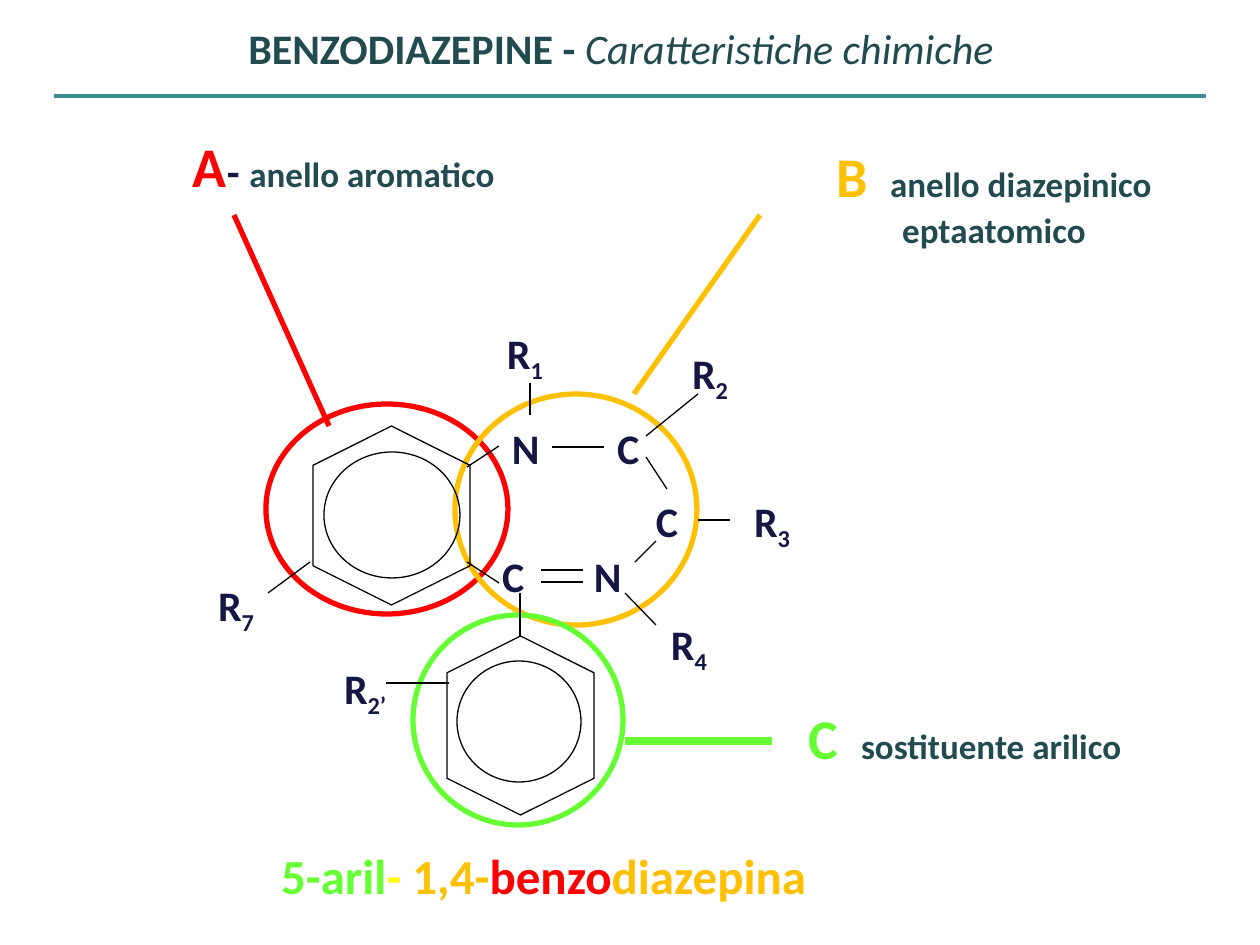
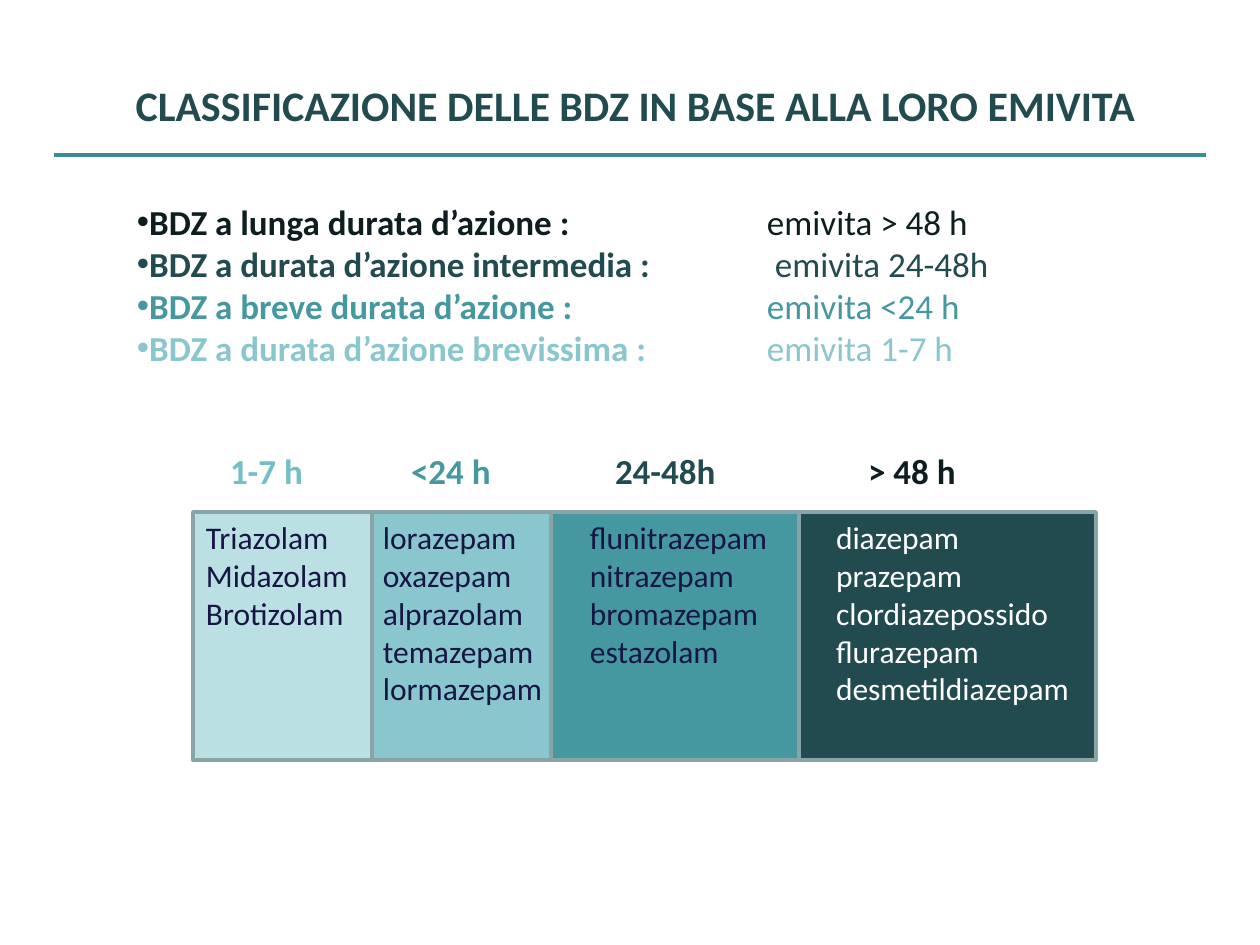
import pptx
import pptx.util
import pptx.dml.color
import pptx.enum.shapes
import pptx.enum.text
import pptx.oxml.ns
import lxml.etree

SCALE = 914400 / 126  # EMU in one px
FONT = "Calibri"
DARK, RULE, NAVY, BLACK = "224B50", "3C8C93", "161645", "000000"
RED, GOLD, GREEN, YELLOW = "FF0000", "FFC000", "66FF33", "FFFF00"
INK, TEAL, AQUA, SKY, PALE = "0E1E20", "4597A0", "8AC6CD", "72BFC5", "BBE0E3"
FRAME, WHITE = "89A4A7", "FFFFFF"
SHAPE = pptx.enum.shapes.MSO_SHAPE
ALIGN = pptx.enum.text.PP_ALIGN
MIDDLE = pptx.enum.text.MSO_ANCHOR.MIDDLE
TOP = pptx.enum.text.MSO_ANCHOR.TOP


def px(num):
    return pptx.util.Emu(round(num * SCALE))


def rgb(code):
    return pptx.dml.color.RGBColor.from_string(code)


def add_sub(node, tag, **attrs):
    return lxml.etree.SubElement(node, pptx.oxml.ns.qn(tag), attrs)


def add_tabs(para, stops):
    tabs = add_sub(para._p.get_or_add_pPr(), "a:tabLst")
    for stop in stops:
        add_sub(tabs, "a:tab", pos=str(px(stop)), algn="l")


def add_dot(para):
    props = para._p.get_or_add_pPr()
    props.set("marL", "0")
    props.set("indent", "0")
    add_sub(props, "a:buFont", typeface="Arial")
    add_sub(props, "a:buChar", char="•")


def write(frame, lines, size, align=ALIGN.LEFT, stops=(), dots=False):
    """Each line is a list of runs: text, colour, then optional settings."""
    for i, line in enumerate(lines):
        para = frame.paragraphs[0] if i == 0 else frame.add_paragraph()
        para.alignment = align
        if dots:
            add_dot(para)
        if stops:
            add_tabs(para, stops)
        for words, color, *rest in line:
            opts = rest[0] if rest else {}
            run = para.add_run()
            run.text = words
            run.font.name = FONT
            run.font.size = pptx.util.Pt(opts.get("size", size))
            run.font.bold = opts.get("bold", True)
            run.font.italic = opts.get("italic", False)
            run.font.color.rgb = rgb(color)
            for key in ("baseline", "spc"):
                if key in opts:
                    run._r.get_or_add_rPr().set(key, str(opts[key]))


def set_frame(frame, anchor, inset):
    frame.word_wrap = True
    frame.vertical_anchor = anchor
    frame.margin_left, frame.margin_right = px(inset), 0


def add_text(slide, box, lines, size, anchor=TOP, inset=13, **look):
    frame = slide.shapes.add_textbox(*map(px, box)).text_frame
    # Centred text has equal side margins
    set_frame(frame, anchor, 0 if look.get("align") == ALIGN.CENTER else inset)
    write(frame, lines, size, **look)


def add_form(slide, kind, box, color, width, fill=None):
    form = slide.shapes.add_shape(kind, *map(px, box))
    form.shadow.inherit = False
    form.line.color.rgb = rgb(color)
    form.line.width = pptx.util.Pt(width)
    if fill:
        form.fill.solid()
        form.fill.fore_color.rgb = rgb(fill)
    else:
        form.fill.background()
    return form


def add_line(slide, ends, color, width):
    kind = pptx.enum.shapes.MSO_CONNECTOR.STRAIGHT
    line = slide.shapes.add_connector(kind, *map(px, ends))
    line.line.color.rgb = rgb(color)
    line.line.width = pptx.util.Pt(width)
    add_sub(line._element.spPr, "a:effectLst")


def add_title(slide, box, runs, rule):
    """Centred heading with the full-width rule at height rule."""
    add_text(slide, box, [runs], 24, anchor=MIDDLE, align=ALIGN.CENTER)
    add_line(slide, (54, rule, 1206, rule), RULE, 2.5)


# Molecule parts, relative to the corner of its box
RINGS = [  # hexagon, inner circle
    ((113, 106, 157, 179), (124, 132, 136, 126)),
    ((247, 316, 147, 179), (257, 341, 124, 121)),
]
ATOMS = [("N", 299, 96), ("C", 404, 96), ("C", 443, 169), ("N", 381, 224), ("C", 289, 224)]
GROUPS = [("1", 294, 1), ("2", 479, 21), ("3", 541, 169),
          ("4", 458, 292), ("7", 5, 253), ("2’", 131, 336)]
BONDS = [
    (341, 250, 383, 250), (341, 262, 383, 262),  # double bond
    (267, 147, 299, 126), (267, 242, 299, 263),  # ring A to ring B
    (352, 127, 404, 127), (446, 137, 467, 169), (435, 242, 456, 221),  # ring B
    (320, 273, 320, 316),  # ring B to ring C
    (330, 95, 330, 63), (446, 116, 498, 74), (498, 200, 530, 200),  # R1 to R3
    (425, 273, 456, 305), (68, 273, 110, 242), (186, 363, 249, 363),  # R4, R7, R2’
]


def draw_mol(slide, left, top):
    for (x, y, w, h), (cx, cy, cw, ch) in RINGS:
        # The hexagon lies flat and is turned upright about its centre
        flat = (left + x + (w - h) / 2, top + y + (h - w) / 2, h, w)
        add_form(slide, SHAPE.HEXAGON, flat, BLACK, 0.75).rotation = 270
        add_form(slide, SHAPE.OVAL, (left + cx, top + cy, cw, ch), BLACK, 0.75)
    for x1, y1, x2, y2 in BONDS:
        add_line(slide, (left + x1, top + y1, left + x2, top + y2), BLACK, 0.75)
    for name, x, y in ATOMS:
        width = 53 if name == "N" else 47
        add_text(slide, (left + x, top + y, width, 63), [[(name, NAVY)]], 24)
    for num, x, y in GROUPS:
        runs = [("R", NAVY), (num, NAVY, {"baseline": -25000})]
        add_text(slide, (left + x, top + y, 67, 71), [runs], 24)


def mark_ring(slide, color, ring, ends, width, box, lines, align=ALIGN.LEFT):
    """Coloured ellipse, its leader line and its label."""
    add_form(slide, SHAPE.OVAL, ring, color, 3)
    add_line(slide, ends, color, width)
    add_text(slide, box, lines, 20, align=align)


def make_chem(slide):
    add_title(slide, (34, 16, 1174, 63),
              [("BENZODIAZEPINE - ", DARK),
               ("Caratteristiche chimiche", DARK, {"bold": False, "italic": True})], 96)
    big, gap = {"size": 32}, {"size": 24, "spc": 740}
    mark_ring(slide, RED, (266, 404, 242, 210), (234, 215, 329, 426), 3,
              (180, 125, 326, 81),
              [[("A", RED, big), ("- ", NAVY, {"size": 24}), ("anello aromatico", DARK)]])
    mark_ring(slide, GOLD, (455, 394, 242, 231), (634, 394, 760, 215), 3,
              (824, 135, 340, 122),
              [[("B", GOLD, big), (" ", DARK, gap), ("anello diazepinico", DARK)],
               [("eptaatomico", DARK)]], ALIGN.CENTER)
    mark_ring(slide, GREEN, (413, 615, 210, 210), (625, 741, 772, 741), 4.5,
              (796, 697, 338, 81),
              [[("C", GREEN, big), (" ", DARK, gap), ("sostituente arilico", DARK)]])
    draw_mol(slide, 200, 320)
    # Name of the compound
    add_text(slide, (268, 839, 549, 72),
             [[("5-aril", GREEN), ("- ", YELLOW), ("1,4-", GOLD),
               ("benzo", RED), ("diazepina", GOLD)]], 28)


KINDS = [
    ("BDZ a lunga durata d’azione :", "\temivita > 48 h", INK),
    ("BDZ a durata d’azione intermedia :", "\t emivita 24-48h", DARK),
    ("BDZ a breve durata d’azione :", "\temivita <24 h", TEAL),
    ("BDZ a durata d’azione brevissima :", "\temivita 1-7 h", AQUA),
]
DRUGS = [  # width, fill, text colour, inset, names
    (179, PALE, NAVY, 13, "Triazolam Midazolam Brotizolam"),
    (179, AQUA, NAVY, 11, "lorazepam oxazepam alprazolam temazepam lormazepam"),
    (248, TEAL, NAVY, 39, "flunitrazepam nitrazepam bromazepam estazolam"),
    (297, DARK, WHITE, 37, "diazepam prazepam clordiazepossido flurazepam desmetildiazepam"),
]


def list_kinds(slide, box):
    lines = [[(name, color), (life, color, {"bold": False})] for name, life, color in KINDS]
    add_text(slide, box, lines, 20, stops=[630], dots=True)


def draw_drugs(slide, left, top, height):
    # Half-life headings above the columns
    heads = [("1-7 h", SKY), ("\t<24 h", TEAL), ("\t24-48h", DARK), ("\t> 48 h", INK)]
    add_text(slide, (left, top - 69, 926, 55), [heads], 20,
             inset=37, stops=[181, 385, 638])
    # One filled column per class
    for width, fill, color, inset, names in DRUGS:
        col = add_form(slide, SHAPE.RECTANGLE, (left, top, width, height), FRAME, 2, fill)
        set_frame(col.text_frame, TOP, inset)
        lines = [[(name, color, {"bold": False})] for name in names.split()]
        write(col.text_frame, lines, 18)
        left += width


def make_class(slide):
    add_title(slide, (54, 26, 1163, 158),
              [("CLASSIFICAZIONE DELLE BDZ IN BASE ALLA LORO EMIVITA", DARK)], 155)
    list_kinds(slide, (124, 194, 973, 268))
    draw_drugs(slide, 193, 512, 248)


def main():
    deck = pptx.Presentation()
    deck.slide_width, deck.slide_height = px(1260), px(945)
    for make in (make_chem, make_class):
        make(deck.slides.add_slide(deck.slide_layouts[6]))
    deck.save("out.pptx")


if __name__ == "__main__":
    main()
